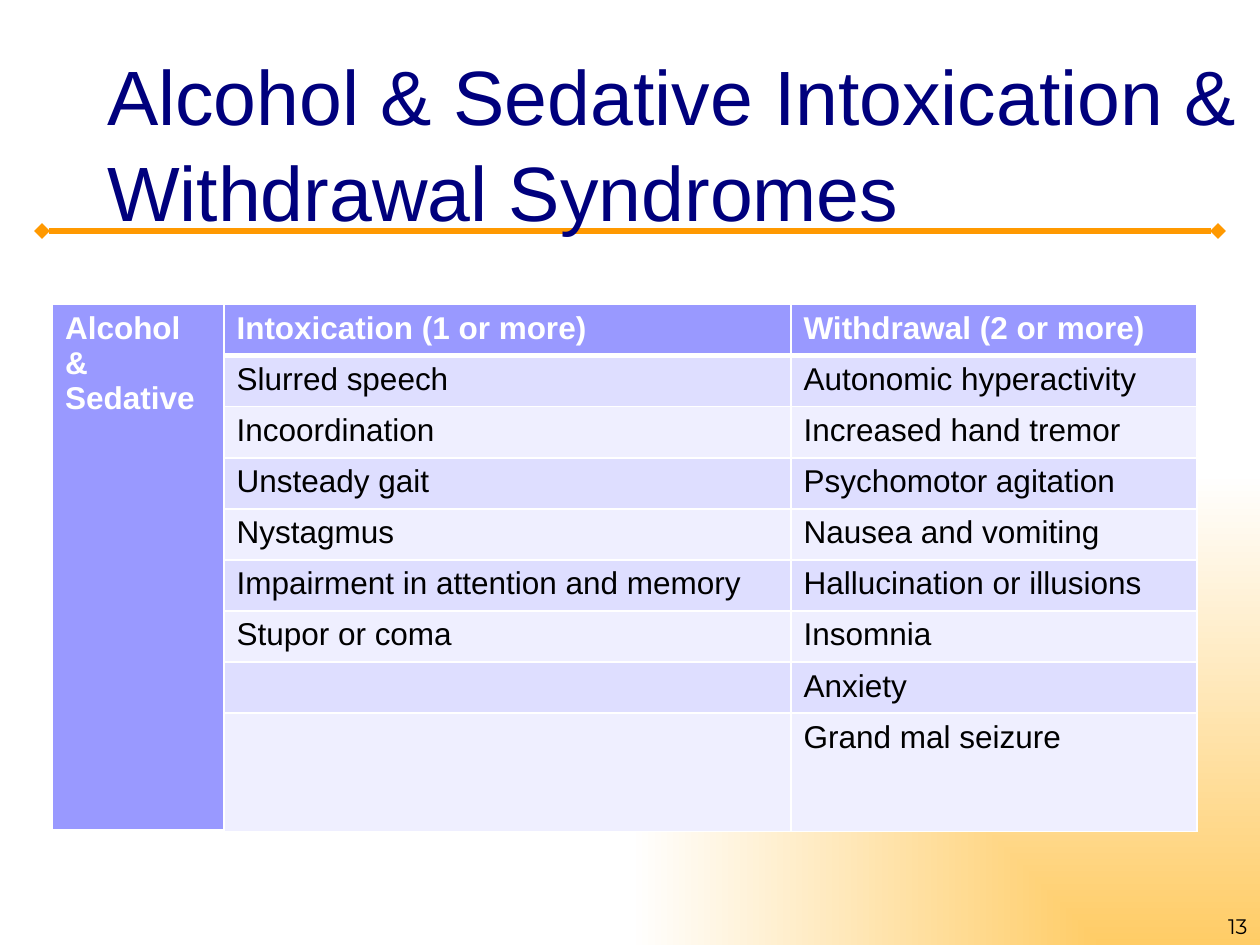
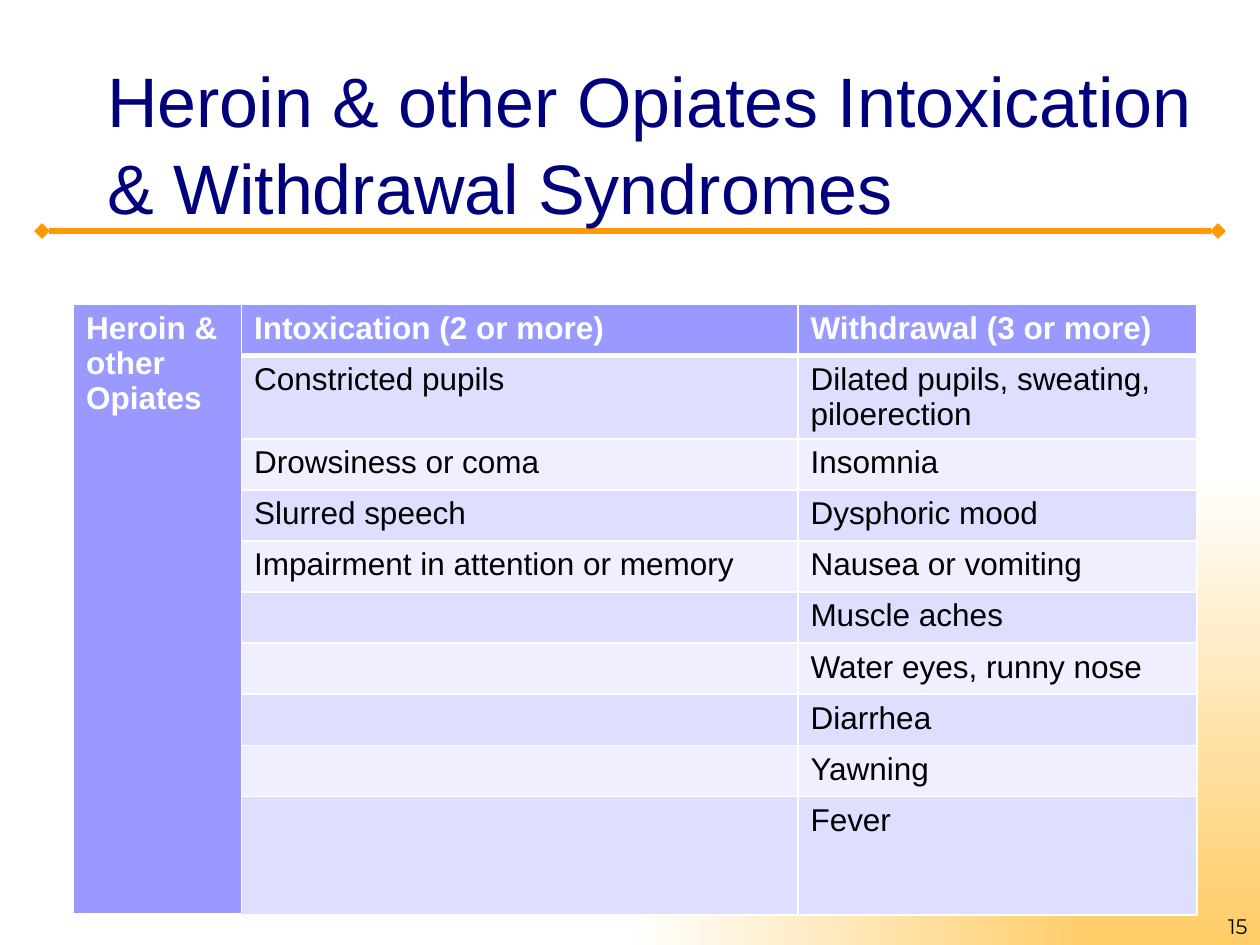
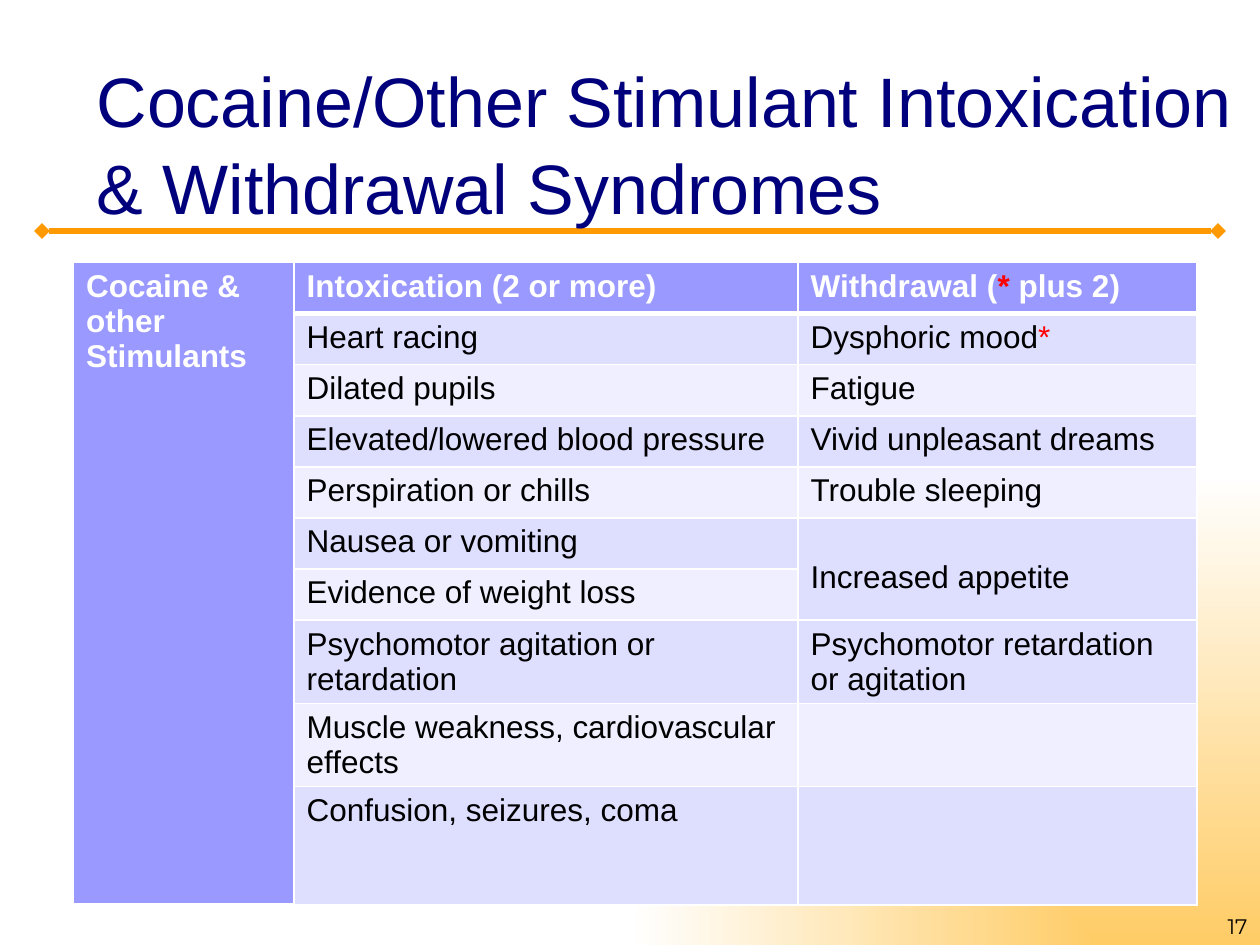
from lxml import etree
from pptx import Presentation
from pptx.dml.color import RGBColor
from pptx.enum import shapes, text
from pptx.oxml import ns
from pptx.util import Pt

NAVY = RGBColor(0x00, 0x00, 0x7D)
ORANGE = RGBColor(0xFF, 0x99, 0x00)
SAND = RGBColor(0xFF, 0xCC, 0x66)
WHITE = RGBColor(0xFF, 0xFF, 0xFF)
BLACK = RGBColor(0x00, 0x00, 0x00)
RED = RGBColor(0xFF, 0x00, 0x00)
HEADER = RGBColor(0x99, 0x99, 0xFF)
BANDS = (RGBColor(0xEF, 0xEF, 0xFF), RGBColor(0xDE, 0xDE, 0xFF))

BODY_FONT = "Arial"
NUMBER_FONT = "Montserrat"
ROW_HEIGHT = 29.2
LAST_ROW_HEIGHT = 67.2
SAME_AS_ABOVE = None


def sub(parent, tag, **attributes):
    return etree.SubElement(parent, ns.qn(tag), attributes)


class Deck:
    def __init__(self):
        self.presentation = Presentation()
        self.presentation.slide_width = Pt(720)
        self.presentation.slide_height = Pt(540)
        self.master = self.presentation.slide_master
        self.slide = None
        self.background()

    def background(self):
        fill = self.master.background.fill
        fill.gradient()
        for stop, color, position in zip(fill.gradient_stops, (SAND, WHITE), (0, 1)):
            stop.color.rgb = color
            stop.position = position
        gradient = self.master.element.find(".//" + ns.qn("a:gradFill"))
        gradient.remove(gradient.find(ns.qn("a:lin")))
        corner = sub(gradient, "a:path", path="rect")
        sub(corner, "a:fillToRect", l="100000", t="100000")

    def add_slide(self):
        layout = self.presentation.slide_layouts[5]
        self.slide = self.presentation.slides.add_slide(layout)

    def title_rule(self):
        rule = self.slide.shapes.add_connector(
            shapes.MSO_CONNECTOR.STRAIGHT, Pt(24), Pt(132), Pt(696), Pt(132))
        rule.line.color.rgb = ORANGE
        rule.line.width = Pt(3)
        outline = rule.line._get_or_add_ln()
        for end in ("a:headEnd", "a:tailEnd"):
            sub(outline, end, type="diamond")
        sub(rule.element.spPr, "a:effectLst")
        self.master.shapes.element.append(rule.element)

    def run(self, paragraph, words, size, color, bold=False, font=BODY_FONT):
        run = paragraph.add_run()
        run.text = words
        run.font.name = font
        run.font.size = Pt(size)
        run.font.bold = bold
        run.font.color.rgb = color

    def title(self, words, size, left, width):
        title = self.slide.shapes.title
        title.left, title.top = Pt(left), Pt(24)
        title.width, title.height = Pt(width), Pt(108)
        frame = title.text_frame
        frame.word_wrap = True
        frame.auto_size = text.MSO_AUTO_SIZE.NONE
        frame.vertical_anchor = text.MSO_ANCHOR.MIDDLE
        frame.margin_top = Pt(8.8)
        paragraph = frame.paragraphs[0]
        paragraph.alignment = text.PP_ALIGN.LEFT
        paragraph.line_spacing = 1.04
        self.run(paragraph, words, size, NAVY)

    def borders(self, cell, top, bottom):
        properties = cell._tc.get_or_add_tcPr()
        widths = {"a:lnL": 1, "a:lnR": 1, "a:lnT": top, "a:lnB": bottom}
        for position, (side, width) in enumerate(widths.items()):
            line = etree.Element(ns.qn(side), w=str(Pt(width)))
            sub(sub(line, "a:solidFill"), "a:srgbClr", val=str(WHITE))
            properties.insert(position, line)

    def cell(self, cell, words, row, is_header):
        cell.fill.solid()
        cell.fill.fore_color.rgb = HEADER if is_header else BANDS[row % 2]
        self.borders(cell, 3 if row == 1 and not is_header else 1, 3 if row == 0 else 1)
        before, star, after = (words or "").partition("*")
        color = WHITE if is_header else BLACK
        for part, part_color in ((before, color), (star, RED), (after, color)):
            if part:
                self.run(cell.text_frame.paragraphs[0], part, 18, part_color, is_header)

    def syndromes(self, substance, pairs, left, top, widths):
        rows = [(substance, *pairs[0])]
        rows += [(SAME_AS_ABOVE, *pair) for pair in pairs[1:]]
        table = self.slide.shapes.add_table(
            len(rows), len(widths), Pt(left), Pt(top),
            Pt(sum(widths)), Pt(ROW_HEIGHT * len(rows))).table
        for column, width in zip(table.columns, widths):
            column.width = Pt(width)
        for row in table.rows:
            row.height = Pt(ROW_HEIGHT)
        table.rows[len(rows) - 1].height = Pt(LAST_ROW_HEIGHT)
        for r, entries in enumerate(rows):
            for c, words in enumerate(entries):
                self.cell(table.cell(r, c), words, r, r == 0 or c == 0)
        for c, entries in enumerate(zip(*rows)):
            starts = [r for r, words in enumerate(entries) if words is not SAME_AS_ABOVE]
            for start, following in zip(starts, starts[1:] + [len(rows)]):
                if following - start > 1:
                    table.cell(start, c).merge(table.cell(following - 1, c))
        return table

    def page_number(self, number):
        box = self.slide.shapes.add_textbox(Pt(552), Pt(504), Pt(168), Pt(36))
        frame = box.text_frame
        frame.word_wrap = True
        frame.vertical_anchor = text.MSO_ANCHOR.BOTTOM
        frame.paragraphs[0].alignment = text.PP_ALIGN.RIGHT
        self.run(frame.paragraphs[0], str(number), 12, BLACK, font=NUMBER_FONT)


ALCOHOL = [
    ("Intoxication (1 or more)", "Withdrawal (2 or more)"),
    ("Slurred speech", "Autonomic hyperactivity"),
    ("Incoordination", "Increased hand tremor"),
    ("Unsteady gait", "Psychomotor agitation"),
    ("Nystagmus", "Nausea and vomiting"),
    ("Impairment in attention and memory", "Hallucination or illusions"),
    ("Stupor or coma", "Insomnia"),
    ("", "Anxiety"),
    ("", "Grand mal seizure"),
]
OPIATES = [
    ("Intoxication (2 or more)", "Withdrawal (3 or more)"),
    ("Constricted pupils", "Dilated pupils, sweating, piloerection"),
    ("Drowsiness or coma", "Insomnia"),
    ("Slurred speech", "Dysphoric mood"),
    ("Impairment in attention or memory", "Nausea or vomiting"),
    ("", "Muscle aches"),
    ("", "Water eyes, runny nose"),
    ("", "Diarrhea"),
    ("", "Yawning"),
    ("", "Fever"),
]
STIMULANTS = [
    ("Intoxication (2 or more)", "Withdrawal (* plus 2)"),
    ("Heart racing", "Dysphoric mood*"),
    ("Dilated pupils", "Fatigue"),
    ("Elevated/lowered blood pressure", "Vivid unpleasant dreams"),
    ("Perspiration or chills", "Trouble sleeping"),
    ("Nausea or vomiting", "Increased appetite"),
    ("Evidence of weight loss", SAME_AS_ABOVE),
    ("Psychomotor agitation or retardation", "Psychomotor retardation or agitation"),
    ("Muscle weakness, cardiovascular effects", ""),
    ("Confusion, seizures, coma", ""),
]


def main():
    deck = Deck()

    deck.add_slide()
    deck.title_rule()
    deck.title("Alcohol & Sedative Intoxication & Withdrawal Syndromes", 44, 54, 666)
    deck.syndromes("Alcohol & Sedative", ALCOHOL, 30, 174, (98, 324, 232))
    deck.page_number(13)

    deck.add_slide()
    deck.title("Heroin & other Opiates Intoxication & Withdrawal Syndromes", 40, 54, 666)
    deck.syndromes("Heroin & other Opiates", OPIATES, 42, 174, (96, 318, 228))
    deck.page_number(15)

    deck.add_slide()
    deck.title("Cocaine/Other Stimulant Intoxication & Withdrawal Syndromes", 40, 48, 690)
    stimulants = deck.syndromes(
        "Cocaine & other Stimulants", STIMULANTS, 42, 150, (126, 288, 228))
    stimulants.cell(5, 2).margin_top = Pt(24)
    deck.page_number(17)

    deck.presentation.save("out.pptx")


if __name__ == "__main__":
    main()
